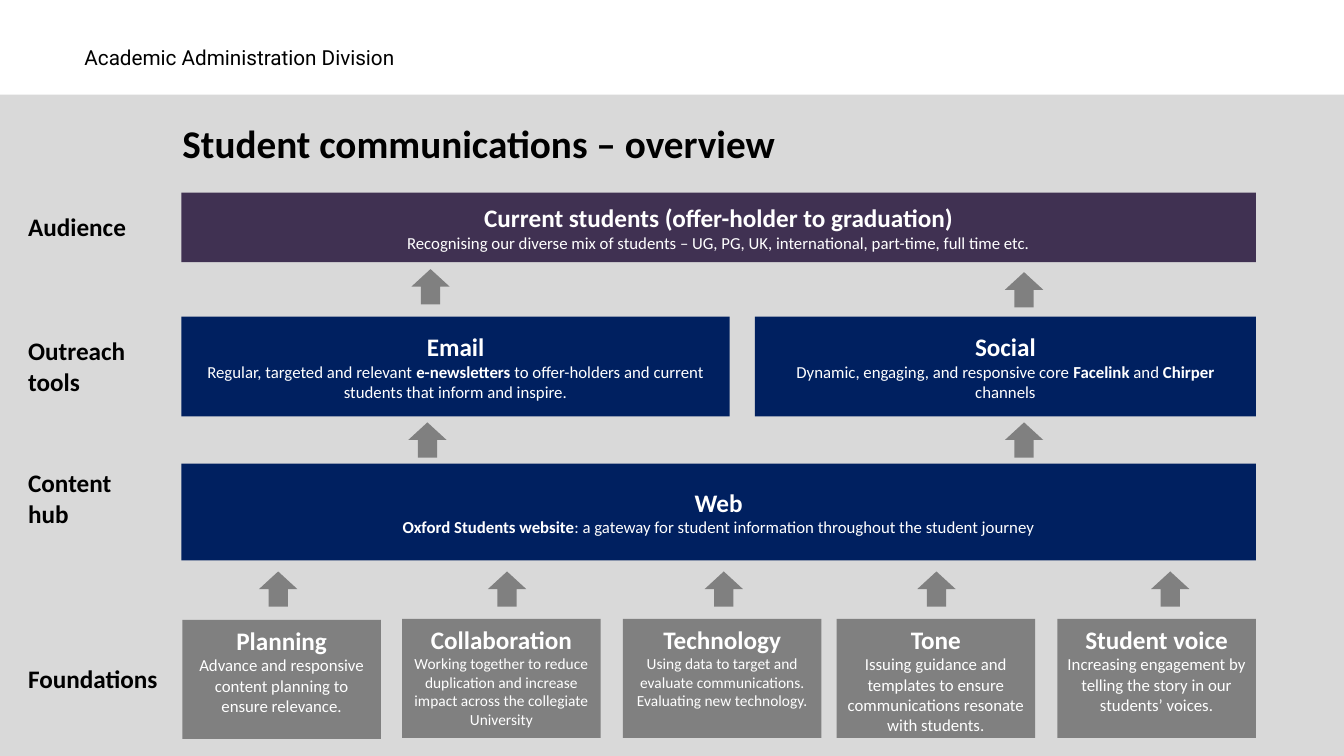
from dataclasses import dataclass

from pptx import Presentation
from pptx.dml.color import RGBColor
from pptx.enum.shapes import MSO_SHAPE
from pptx.enum.text import MSO_ANCHOR, PP_ALIGN
from pptx.shapes.autoshape import Shape
from pptx.slide import Slide
from pptx.text.text import TextFrame
from pptx.util import Pt

RECTANGLE, UP_ARROW = MSO_SHAPE.RECTANGLE, MSO_SHAPE.UP_ARROW
TOP, MIDDLE = MSO_ANCHOR.TOP, MSO_ANCHOR.MIDDLE
LEFT, CENTER = PP_ALIGN.LEFT, PP_ALIGN.CENTER
TITLE_ONLY = 5
BOLD_MARK = "**"


@dataclass(frozen=True)
class Theme:
    font: str = "Calibri"
    header_font: str = "Roboto"
    black: str = "000000"
    white: str = "FFFFFF"
    band: str = "D9D9D9"
    purple: str = "403152"
    navy: str = "002060"
    gray: str = "808080"
    title_size: float = 28
    heading_size: float = 18
    header_size: float = 14.8
    body_size: float = 12
    small_size: float = 11


THEME = Theme()


@dataclass(frozen=True)
class Area:
    left: float
    top: float
    width: float
    height: float

    def lengths(self) -> tuple[Pt, ...]:
        return Pt(self.left), Pt(self.top), Pt(self.width), Pt(self.height)


@dataclass(frozen=True)
class Box:
    area: Area
    fill: str
    heading: str
    body: str
    body_size: float = THEME.body_size
    anchor: MSO_ANCHOR = MIDDLE


@dataclass(frozen=True)
class Label:
    area: Area
    lines: tuple[str, ...]


@dataclass(frozen=True)
class ArrowRow:
    top: float
    lefts: tuple[float, ...]


LEFT_EDGE, FULL_WIDTH = 129.6, 767.5
OUTREACH_TOP, OUTREACH_HEIGHT = 226.1, 71.3
FOUNDATION_WIDTH, FOUNDATION_HEIGHT = 141.8, 85
ARROW_WIDTH, ARROW_HEIGHT = 27.4, 25.2
LABEL_LEFT = 13

HEADER = Area(53.3, 28.1, 560, 25.2)
BAND = Area(0, 67.7, 960, 472.3)
TITLE = Area(123.1, 81.4, 803.5, 41)

MAIN_BOXES = (
    Box(Area(LEFT_EDGE, 137.5, FULL_WIDTH, 49.7), THEME.purple,
        "Current students (offer-holder to graduation)",
        "Recognising our diverse mix of students – UG, PG, UK, international, "
        "part-time, full time etc."),
    Box(Area(LEFT_EDGE, OUTREACH_TOP, 391.7, OUTREACH_HEIGHT), THEME.navy, "Email",
        "Regular, targeted and relevant **e-newsletters** to offer-holders and "
        "current students that inform and inspire."),
    Box(Area(539.3, OUTREACH_TOP, 357.8, OUTREACH_HEIGHT), THEME.navy, "Social",
        "Dynamic, engaging, and responsive core **Facelink** and **Chirper** channels"),
    Box(Area(LEFT_EDGE, 331.2, FULL_WIDTH, 69.1), THEME.navy, "Web",
        "**Oxford Students website**: a gateway for student information "
        "throughout the student journey"),
)

FOUNDATIONS = (
    (130.3, 442.8, "Planning", THEME.body_size,
     "Advance and responsive content planning to ensure relevance."),
    (287.3, 442.1, "Collaboration", THEME.small_size,
     "Working together to reduce duplication and increase impact across the "
     "collegiate University"),
    (445, 442.1, "Technology", THEME.small_size,
     "Using data to target and evaluate communications. Evaluating new technology."),
    (597.6, 442.1, "Tone", THEME.body_size,
     "Issuing guidance and templates to ensure communications resonate with students."),
    (755.3, 442.1, "Student voice", THEME.body_size,
     "Increasing engagement by telling the story in our students’ voices."),
)

FOUNDATION_BOXES = tuple(
    Box(Area(left, top, FOUNDATION_WIDTH, FOUNDATION_HEIGHT), THEME.gray,
        heading, body, size, TOP)
    for left, top, heading, size, body in FOUNDATIONS
)

LABELS = (
    Label(Area(LABEL_LEFT, 147.6, 85, 28.8), ("Audience",)),
    Label(Area(LABEL_LEFT, 236.2, 88.6, 51.1), ("Outreach", "tools")),
    Label(Area(LABEL_LEFT, 330.5, 74.2, 51.1), ("Content", "hub")),
    Label(Area(LABEL_LEFT, 470.2, 110.2, 28.8), ("Foundations",)),
)

ARROW_ROWS = (
    ArrowRow(192.2, (293.8,)),
    ArrowRow(194.4, (717.8,)),
    ArrowRow(301.7, (291.6, 717.8)),
    ArrowRow(408.2, (185, 348.5, 503.3, 655.2, 822.2)),
)


def write_line(frame: TextFrame, index: int, text: str, size: float, color: str,
               bold: bool = False, alignment: PP_ALIGN = LEFT,
               font_name: str = THEME.font) -> None:
    """Write one paragraph; text between bold marks switches to bold."""
    paragraph = frame.add_paragraph() if index else frame.paragraphs[0]
    paragraph.alignment = alignment
    for position, part in enumerate(text.split(BOLD_MARK)):
        if not part:
            continue
        run = paragraph.add_run()
        run.text = part
        font_format = {"name": font_name, "size": Pt(size),
                       "bold": bold or position % 2 == 1}
        for name, value in font_format.items():
            setattr(run.font, name, value)
        run.font.color.rgb = RGBColor.from_string(color)


def add_filled_shape(slide: Slide, kind: MSO_SHAPE, area: Area, fill: str) -> Shape:
    shape = slide.shapes.add_shape(kind, *area.lengths())
    shape.shadow.inherit = False
    shape.fill.solid()
    shape.fill.fore_color.rgb = RGBColor.from_string(fill)
    shape.line.fill.background()
    return shape


def add_box(slide: Slide, box: Box) -> None:
    frame = add_filled_shape(slide, RECTANGLE, box.area, box.fill).text_frame
    frame.word_wrap = True
    frame.vertical_anchor = box.anchor
    write_line(frame, 0, box.heading, THEME.heading_size, THEME.white, True, CENTER)
    write_line(frame, 1, box.body, box.body_size, THEME.white, False, CENTER)


def add_label(slide: Slide, label: Label) -> None:
    frame = slide.shapes.add_textbox(*label.area.lengths()).text_frame
    frame.word_wrap = False
    for index, line in enumerate(label.lines):
        write_line(frame, index, line, THEME.heading_size, THEME.black, True)


def add_header(slide: Slide) -> None:
    frame = slide.shapes.add_textbox(*HEADER.lengths()).text_frame
    frame.word_wrap = True
    write_line(frame, 0, "Academic Administration Division", THEME.header_size,
               THEME.black, font_name=THEME.header_font)


def format_title(slide: Slide, band: Shape) -> None:
    """Fill the title placeholder and put the band behind it."""
    title = slide.shapes.title
    title.element.addprevious(band.element)
    for name, value in zip(("left", "top", "width", "height"), TITLE.lengths()):
        setattr(title, name, value)
    title.text_frame.word_wrap = True
    title.text_frame.vertical_anchor = TOP
    write_line(title.text_frame, 0, "Student communications – overview",
               THEME.title_size, THEME.black, True)


def main() -> None:
    presentation = Presentation()
    presentation.slide_width, presentation.slide_height = Pt(960), Pt(540)
    slide = presentation.slides.add_slide(presentation.slide_layouts[TITLE_ONLY])
    format_title(slide, add_filled_shape(slide, RECTANGLE, BAND, THEME.band))
    add_header(slide)
    for box in MAIN_BOXES + FOUNDATION_BOXES:
        add_box(slide, box)
    for label in LABELS:
        add_label(slide, label)
    for row in ARROW_ROWS:
        for left in row.lefts:
            area = Area(left, row.top, ARROW_WIDTH, ARROW_HEIGHT)
            add_filled_shape(slide, UP_ARROW, area, THEME.gray)
    presentation.save("out.pptx")


if __name__ == "__main__":
    main()
